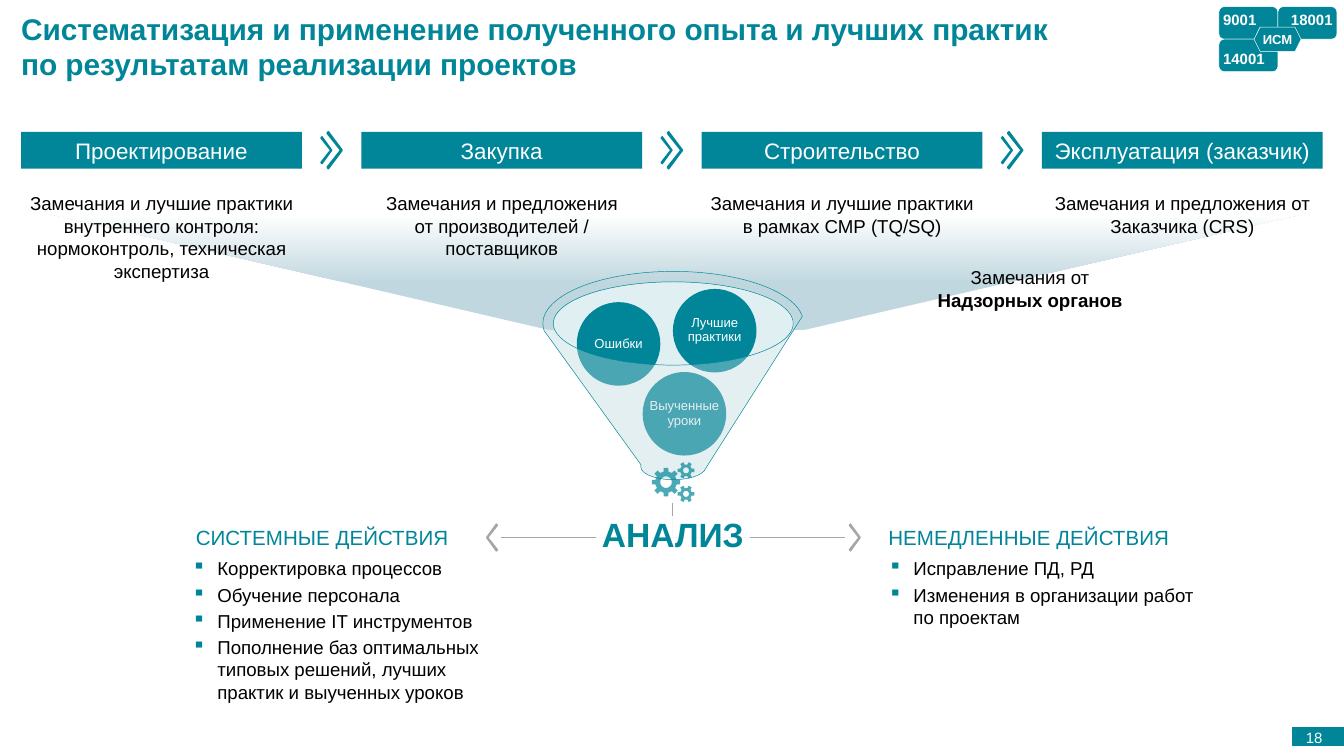
import math
from lxml import etree
from pptx import Presentation
from pptx import util as u
from pptx.dml import color as dml
from pptx.enum import shapes, text
from pptx.oxml import ns

Pt, SHAPE = u.Pt, shapes.MSO_SHAPE
LEFT, CENTER, RIGHT = text.PP_ALIGN.LEFT, text.PP_ALIGN.CENTER, text.PP_ALIGN.RIGHT
TOP, MIDDLE, BOTTOM = text.MSO_ANCHOR.TOP, text.MSO_ANCHOR.MIDDLE, text.MSO_ANCHOR.BOTTOM
TEAL, GRAY, WHITE, BLACK = "008698", "A6A6A6", "FFFFFF", "000000"

TITLE = ("Систематизация и применение полученного опыта и лучших практик\v"
         "по результатам реализации проектов")
STAGES = [
    ("Проектирование", ["Замечания и лучшие практики внутреннего контроля: "
                        "нормоконтроль, техническая экспертиза"]),
    ("Закупка", ["Замечания и предложения", "от производителей / поставщиков"]),
    ("Строительство", ["Замечания и лучшие практики\vв рамках СМР (TQ/SQ)"]),
    ("Эксплуатация (заказчик)", ["Замечания и предложения от\vЗаказчика (СRS)"]),
]
SUPERVISION = "Замечания от\vНадзорных органов"
BALLS = [("Выученные\vуроки", 344.3, 199.3), ("Ошибки", 309, 161.9),
         ("Лучшие\vпрактики", 360.5, 154.8)]
ACTIONS = [  # heading, heading width, alignment, left, list width, items
    ("СИСТЕМНЫЕ ДЕЙСТВИЯ", 137.3, RIGHT, 103, 167.8,
     ["Корректировка процессов", "Обучение персонала", "Применение IT инструментов",
      "Пополнение баз оптимальных типовых решений, лучших практик и выученных уроков"]),
    ("НЕМЕДЛЕННЫЕ ДЕЙСТВИЯ", 152.6, LEFT, 475.9, 196.6,
     ["Исправление ПД, РД", "Изменения в организации работ\vпо проектам"]),
]
STANDARDS = [("9001", 0, 0, LEFT, TOP), ("18001", 1, 0, RIGHT, TOP),
             ("14001", 0, 1, LEFT, BOTTOM)]
GEARS = [  # centre x, centre y, outer, root and hole radius, teeth
    (356.8, 258.3, 7.7, 5.8, 3.1, 8),
    (367.5, 252, 4.6, 3.2, 1.6, 6), (367.5, 264.6, 4.6, 3.2, 1.6, 6)]

STAGE_LEFT, STAGE_STEP, STAGE_WIDTH = 11.3, 182.3, 150.4
STAGE_TOP, STAGE_HEIGHT = 70.6, 19.8
AXIS_X, AXIS_Y, STEM_TOP = 360, 288, 269.3


def rgb(value):
    return dml.RGBColor.from_string(value)


def paint(shape, fill=None, line=None, weight=0.75, opacity=100):
    shape.shadow.inherit = False
    if fill:
        shape.fill.solid()
        shape.fill.fore_color.rgb = rgb(fill)
        if opacity < 100:
            color = shape._element.spPr.find(".//" + ns.qn("a:srgbClr"))
            etree.SubElement(color, ns.qn("a:alpha"), val=str(opacity * 1000))
    if line:
        shape.line.color.rgb = rgb(line)
        shape.line.width = Pt(weight)
    else:
        shape.line.fill.background()
    return shape


def add_preset(kind, left, top, width, height, **style):
    shape = slide.shapes.add_shape(kind, Pt(left), Pt(top), Pt(width), Pt(height))
    return paint(shape, **style)


def add_bullet(paragraph):
    properties = paragraph._p.get_or_add_pPr()
    properties.set("marL", str(Pt(13.5)))
    properties.set("indent", str(-Pt(13.5)))
    color = etree.SubElement(properties, ns.qn("a:buClr"))
    etree.SubElement(color, ns.qn("a:srgbClr"), val=TEAL)
    etree.SubElement(properties, ns.qn("a:buChar"), char="▪")


def write(shape, paragraphs, size, color=BLACK, bold=False, align=CENTER, anchor=TOP,
          inset=(0, 0), wrap=True, spacing=None, bullets=False):
    frame = shape.text_frame
    frame.word_wrap = wrap
    frame.vertical_anchor = anchor
    frame.margin_left = frame.margin_right = Pt(inset[0])
    frame.margin_top = frame.margin_bottom = Pt(inset[1])
    for index, content in enumerate(paragraphs):
        paragraph = frame.paragraphs[0] if index == 0 else frame.add_paragraph()
        paragraph.text = content
        paragraph.alignment = align
        if spacing:
            paragraph.line_spacing = spacing
        if bullets:
            if index:
                paragraph.space_before = Pt(2)
            add_bullet(paragraph)
        for run in paragraph.runs:
            run.font.name, run.font.size, run.font.bold = "Arial", Pt(size), bold
            run.font.color.rgb = rgb(color)
        for line_break in paragraph._p.findall(ns.qn("a:br")):
            etree.SubElement(line_break, ns.qn("a:rPr"), sz=str(size * 100))
    return shape


def add_text(left, top, width, height, paragraphs, size, **style):
    box = slide.shapes.add_textbox(Pt(left), Pt(top), Pt(width), Pt(height))
    return write(box, paragraphs, size, **style)


def add_outline(contours, **style):
    """Draw closed polygons as one shape."""
    contours = [[(Pt(x), Pt(y)) for x, y in contour] for contour in contours]
    builder = slide.shapes.build_freeform(*contours[0][0])
    for index, contour in enumerate(contours):
        if index:
            builder.move_to(*contour[0])
        builder.add_line_segments(contour[1:], close=True)
    return paint(builder.convert_to_shape(), **style)


def add_chevron(left, center, width, height, line, weight, mirrored=False):
    edge, top = 0.6, center - height / 2
    points = [(edge, height), (0, height - edge), (width - edge, height / 2),
              (0, edge), (edge, 0), (width, height / 2)]
    add_outline([[(left + (width - x if mirrored else x), top + y) for x, y in points]],
                fill=TEAL, line=line, weight=weight)


def gear_contours(x, y, outer, root, hole, teeth):
    def polar(radius, turn):
        return x + radius * math.cos(math.tau * turn), y + radius * math.sin(math.tau * turn)
    profile = [(root, -0.28), (outer, -0.2), (outer, 0.2), (root, 0.28)]
    rim = [polar(radius, (tooth + shift) / teeth)
           for tooth in range(teeth) for radius, shift in profile]
    return [rim, [polar(hole, -step / 24) for step in range(24)]]


def add_branch(end_x, rotation, flipped=False):
    """Elbow going down from the gears and then sideways to end_x."""
    span, drop = abs(end_x - AXIS_X), AXIS_Y - STEM_TOP
    left = (end_x + AXIS_X - drop) / 2
    top = (AXIS_Y + STEM_TOP - span) / 2
    branch = slide.shapes.add_connector(shapes.MSO_CONNECTOR.ELBOW, Pt(left), Pt(top),
                                        Pt(left + drop), Pt(top + span))
    branch.line.color.rgb, branch.line.width = rgb(GRAY), Pt(0.25)
    properties = branch._element.spPr
    properties.find(ns.qn("a:prstGeom")).set("prst", "bentConnector2")
    frame = properties.find(ns.qn("a:xfrm"))
    frame.set("rot", str(rotation * 60000))
    if flipped:
        frame.set("flipH", "1")
    etree.SubElement(properties, ns.qn("a:effectLst"))


presentation = Presentation()
presentation.slide_width, presentation.slide_height = Pt(720), Pt(405)
slide = presentation.slides.add_slide(presentation.slide_layouts[6])

add_preset(SHAPE.RECTANGLE, 692.5, 389.8, 27.5, 9.6, fill=TEAL, line=TEAL)
add_text(680.4, 389.8, 28.1, 10.1, ["18"], 8, color=WHITE, align=RIGHT, anchor=MIDDLE,
         wrap=False, spacing=1.1)

# Funnel
beam = add_preset(SHAPE.TRAPEZOID, 25.2, 114.3, 674.6, 62.6)
beam.adjustments[0] = 4.3
beam._element.spPr.find(ns.qn("a:xfrm")).set("flipV", "1")
beam.fill.gradient()
beam.fill.gradient_angle = 270
for stop, (position, color) in zip(beam.fill.gradient_stops, [(0.39, "C0D7DF"), (1, WHITE)]):
    stop.position, stop.color.rgb = position, rgb(color)
add_preset(SHAPE.OVAL, 296.6, 151.2, 128.9, 44.6, fill="E0F0F2")
for label, left, top in BALLS:
    ball = add_preset(SHAPE.OVAL, left, top, 44.8, 44.8, fill=TEAL)
    write(ball, [label], 7, color=WHITE, anchor=MIDDLE, wrap=False, spacing=0.9)
add_preset(SHAPE.FUNNEL, 290.9, 145.4, 139.7, 111.6, fill="BDD7DE", opacity=40,
           line=TEAL, weight=0.25)

# Title and stages
add_text(11.3, 0, 697.7, 43.9, [TITLE], 16, color=TEAL, bold=True, align=LEFT, anchor=BOTTOM)
for index, (name, notes) in enumerate(STAGES):
    left = STAGE_LEFT + index * STAGE_STEP
    bar = add_preset(SHAPE.RECTANGLE, left, STAGE_TOP, STAGE_WIDTH, STAGE_HEIGHT, fill=TEAL)
    write(bar, [name], 12, color=WHITE, anchor=MIDDLE, inset=(4.3, 0), wrap=False)
    widening = 5 if index == 0 else 0
    add_text(left - widening, 103, STAGE_WIDTH + 2 * widening, 12 * len(notes) + 12, notes, 10)
    if index < len(STAGES) - 1:
        middle = STAGE_TOP + STAGE_HEIGHT / 2
        add_chevron(left + 160.6, middle, 5.8, 14.4, TEAL, 0.75)
        add_chevron(left + 164, middle, 7.9, 19.6, TEAL, 1)
supervision = add_text(501.8, 142.6, 100, 24.5, [SUPERVISION], 10, wrap=False)
supervision.text_frame.paragraphs[0].runs[-1].font.bold = True

# Analysis and resulting actions
add_branch(268.6, 90)
add_branch(452.9, 270, flipped=True)
analysis = add_preset(SHAPE.RECTANGLE, 319.2, 276.5, 82.6, 22.3, fill=WHITE, opacity=90)
write(analysis, ["АНАЛИЗ"], 18, color=TEAL, bold=True, anchor=MIDDLE, inset=(2.9, 1.4),
      wrap=False, spacing=0.9)
add_outline([contour for gear in GEARS for contour in gear_contours(*gear)],
            fill=TEAL, opacity=70)
add_chevron(260.7, AXIS_Y, 5.8, 14.4, GRAY, 0.75, mirrored=True)
add_chevron(455, AXIS_Y, 5.8, 14.4, GRAY, 0.75)
for heading, heading_width, align, left, width, items in ACTIONS:
    add_text(left, 280.8, heading_width, 13.7, [heading], 11, color=TEAL, align=align,
             anchor=MIDDLE, wrap=False)
    add_text(left, 298.5, width, 14 * len(items) + 12, items, 10, align=LEFT, bullets=True)

# Management system badge
for label, column, row, align, anchor in STANDARDS:
    tile = add_preset(SHAPE.ROUNDED_RECTANGLE, 653 + 31.6 * column, 3.6 + 17.4 * row,
                      31.6, 17.4, fill=TEAL, line=WHITE, weight=0.25)
    write(tile, [label], 8, color=WHITE, bold=True, align=align, anchor=anchor,
          inset=(1.4, 1.4))
core = add_preset(SHAPE.HEXAGON, 671.8, 14.5, 25.2, 13, fill=TEAL, line=WHITE, weight=0.25)
write(core, ["ИСМ"], 7, color=WHITE, bold=True, anchor=MIDDLE, wrap=False)

presentation.save("out.pptx")
